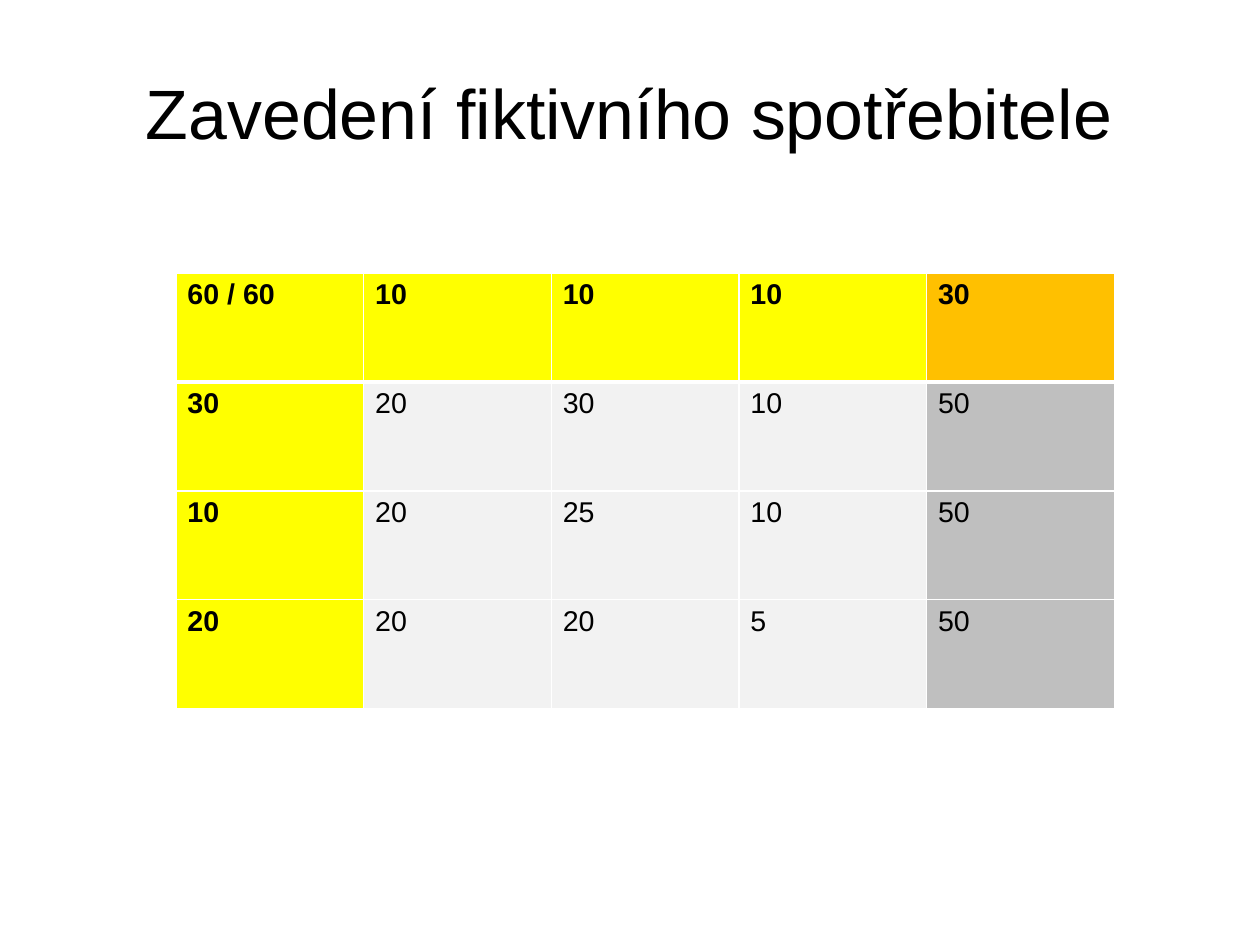
from lxml import etree
from pptx import Presentation
from pptx.dml.color import RGBColor
from pptx.enum.text import MSO_ANCHOR, PP_ALIGN
from pptx.oxml.ns import qn
from pptx.util import Cm, Inches, Pt

MIDDLE = MSO_ANCHOR.MIDDLE
CENTER = PP_ALIGN.CENTER

SLIDE_WIDTH, SLIDE_HEIGHT = Cm(28), Cm(21)
FONT = "Arial"
BLACK, WHITE = "000000", "FFFFFF"
YELLOW, ORANGE = "FFFF00", "FFC000"
LIGHT_GRAY, GRAY = "F2F2F2", "BFBFBF"

TRANSPORT_TABLE = [
    ["60 / 60", "10", "10", "10", "30"],
    ["30", "20", "30", "10", "50"],
    ["10", "20", "25", "10", "50"],
    ["20", "20", "20", "5", "50"],
]


def color(hex_string):
    return RGBColor.from_string(hex_string)


def add_run(paragraph, text, size, bold=False):
    run = paragraph.add_run()
    run.text = text
    run.font.name = FONT
    run.font.size = Pt(size)
    run.font.bold = bold
    run.font.color.rgb = color(BLACK)


def add_title(slide, text, left, top, width, height):
    box = slide.shapes.add_textbox(left, top, width, height)
    frame = box.text_frame
    frame.word_wrap = True
    frame.vertical_anchor = MIDDLE
    frame.margin_left = frame.margin_right = 0
    frame.margin_top = frame.margin_bottom = 0
    paragraph = frame.paragraphs[0]
    paragraph.alignment = CENTER
    paragraph.line_spacing = 0.9
    add_run(paragraph, text, 44)


def set_border(cell, side, width):
    properties = cell._tc.get_or_add_tcPr()
    line = etree.SubElement(properties, qn(f"a:ln{side}"), w=str(Pt(width)))
    fill = etree.SubElement(line, qn("a:solidFill"))
    etree.SubElement(fill, qn("a:srgbClr"), val=WHITE)


def cell_fill(row, column, last_column):
    """Demand row and supply column are yellow; the fictive consumer is darker."""
    if column == last_column:
        return ORANGE if row == 0 else GRAY
    return YELLOW if row == 0 or column == 0 else LIGHT_GRAY


def add_transport_table(slide, values, left, top, width, height):
    row_count, column_count = len(values), len(values[0])
    frame = slide.shapes.add_table(
        row_count, column_count, left, top, width, height)
    table = frame.table
    for row, texts in enumerate(values):
        for column, text in enumerate(texts):
            cell = table.cell(row, column)
            # Border elements must precede the fill in the cell properties.
            border_widths = {"L": 1, "R": 1,
                             "T": 3 if row == 1 else 1,
                             "B": 3 if row == 0 else 1}
            for side, border_width in border_widths.items():
                set_border(cell, side, border_width)
            cell.fill.solid()
            cell.fill.fore_color.rgb = color(
                cell_fill(row, column, column_count - 1))
            is_header = row == 0 or column == 0
            add_run(cell.text_frame.paragraphs[0], text, 18, is_header)


def main():
    presentation = Presentation()
    presentation.slide_width = SLIDE_WIDTH
    presentation.slide_height = SLIDE_HEIGHT
    slide = presentation.slides.add_slide(presentation.slide_layouts[6])
    add_title(slide, "Zavedení fiktivního spotřebitele",
              Inches(0.55), Inches(0.33), Inches(9.92), Inches(1.38))
    add_transport_table(slide, TRANSPORT_TABLE,
                        Inches(1.54), Inches(2.39), Inches(8.21), Inches(3.81))
    presentation.save("out.pptx")


if __name__ == "__main__":
    main()
